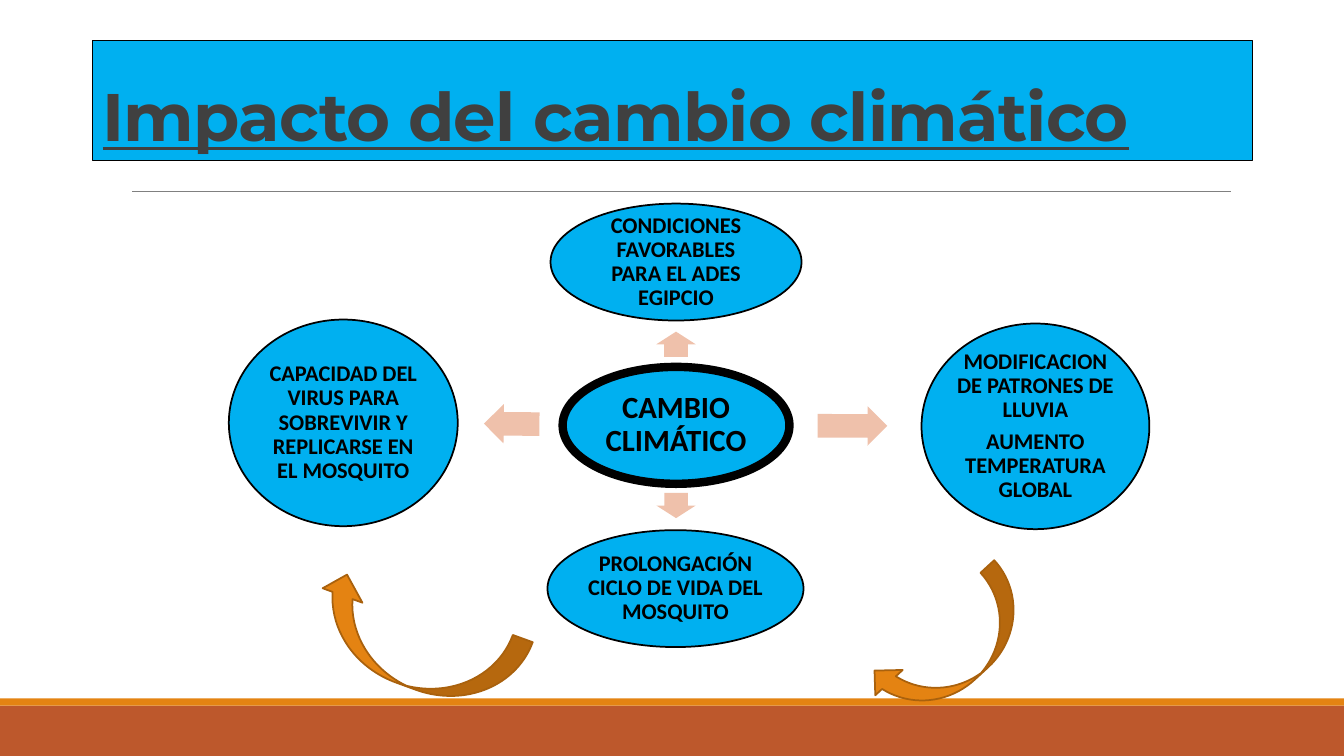
from lxml.etree import SubElement
from pptx import Presentation
from pptx.dml.color import RGBColor
from pptx.enum.shapes import MSO_CONNECTOR, MSO_SHAPE
from pptx.enum.text import MSO_ANCHOR, PP_ALIGN
from pptx.oxml.ns import qn
from pptx.util import Inches, Pt

COLORS = {
    "sky": "00B0F0", "black": "000000", "title": "404040", "rule": "808080",
    "rust": "BD582C", "orange": "E48312", "brown": "A9610D", "peach": "EFC1AB",
}


def color(name):
    return RGBColor.from_string(COLORS[name])


def add_form(kind, box, fill, line=None, width=0, turn=0):
    form = slide.shapes.add_shape(kind, *map(Inches, box))
    form.shadow.inherit = False
    form.rotation = turn
    form.fill.solid()
    form.fill.fore_color.rgb = color(fill)
    if line:
        form.line.color.rgb = color(line)
        form.line.width = Pt(width)
    else:
        form.line.fill.background()
    return form


deck = Presentation()
deck.slide_width, deck.slide_height = Inches(13.33), Inches(7.5)
slide = deck.slides.add_slide(deck.slide_layouts[6])

# Footer bands and rule
add_form(MSO_SHAPE.RECTANGLE, (0, 7, 13.33, 0.5), "rust")
add_form(MSO_SHAPE.RECTANGLE, (0, 6.93, 13.33, 0.07), "orange")
rule = slide.shapes.add_connector(
    MSO_CONNECTOR.STRAIGHT, Inches(1.31), Inches(1.9), Inches(12.21), Inches(1.9))
rule.line.color.rgb = color("rule")
rule.line.width = Pt(0.5)
SubElement(rule._element.spPr, qn("a:effectLst"))

# Title
title = add_form(MSO_SHAPE.RECTANGLE, (0.92, 0.4, 11.5, 1.19), "sky", "black", 0.75)
frame = title.text_frame
frame.word_wrap = True
frame.vertical_anchor = MSO_ANCHOR.BOTTOM
para = frame.paragraphs[0]
para.alignment = PP_ALIGN.LEFT
para.line_spacing = 0.85
run = para.add_run()
run.text = "Impacto del cambio climático"
font = run.font
font.name, font.size = "Montserrat", Pt(48)
font.bold = font.underline = True
font.color.rgb = color("title")
font._element.set("spc", "-50")

# Ovals: box, line width, text size, inset, paragraphs
ovals = [
    ((5.58, 3.64, 2.25, 1.16), 6, 22, 0.03, ["CAMBIO CLIMÁTICO"]),
    ((5.46, 2.02, 2.49, 1.16), 1.25, 16, 0.02,
     ["CONDICIONES FAVORABLES PARA EL ADES EGIPCIO"]),
    ((9.14, 3.21, 2.26, 2.04), 1.25, 16, 0.02,
     ["MODIFICACION DE PATRONES DE LLUVIA", "AUMENTO TEMPERATURA GLOBAL"]),
    ((5.43, 5.26, 2.54, 1.16), 1.25, 16, 0.02,
     ["PROLONGACIÓN CICLO DE VIDA DEL MOSQUITO"]),
    ((2.27, 3.17, 2.27, 2.05), 1.25, 16, 0.02,
     ["CAPACIDAD DEL VIRUS PARA SOBREVIVIR Y REPLICARSE EN EL MOSQUITO"]),
]
for box, width, size, inset, texts in ovals:
    oval = add_form(MSO_SHAPE.OVAL, box, "sky", "black", width)
    frame = oval.text_frame
    frame.word_wrap = True
    frame.vertical_anchor = MSO_ANCHOR.MIDDLE
    frame.margin_left = frame.margin_right = Inches(inset)
    frame.margin_top = frame.margin_bottom = Inches(inset)
    frame.text = "\n".join(texts)
    for i, para in enumerate(frame.paragraphs):
        para.alignment = PP_ALIGN.CENTER
        para.line_spacing = 0.9
        para.space_before = Pt(5.6 if i else 0)
        para.font.name, para.font.size = "Calibri", Pt(size)
        para.font.bold = True
        para.font.color.rgb = color("black")

# Arrows from the centre: left, top, length, turn
for left, top, length, turn in [
    (6.58, 3.22, 0.25, 270), (8.11, 4.03, 0.69, 0.2),
    (6.58, 4.82, 0.25, 90), (4.8, 4.01, 0.55, 180.5),
]:
    arrow = add_form(
        MSO_SHAPE.RIGHT_ARROW, (left, top, length, 0.39), "peach", turn=turn)
    arrow.adjustments[0] = 0.6
    arrow.adjustments[1] = 0.5

# Curved arrows
for box, turn in [((9.08, 5.54, 0.74, 1.8), 47.3), ((3.7, 5.31, 0.84, 2.17), 110)]:
    add_form(MSO_SHAPE.CURVED_LEFT_ARROW, box, "orange", "brown", 1.25, turn)

deck.save("out.pptx")
